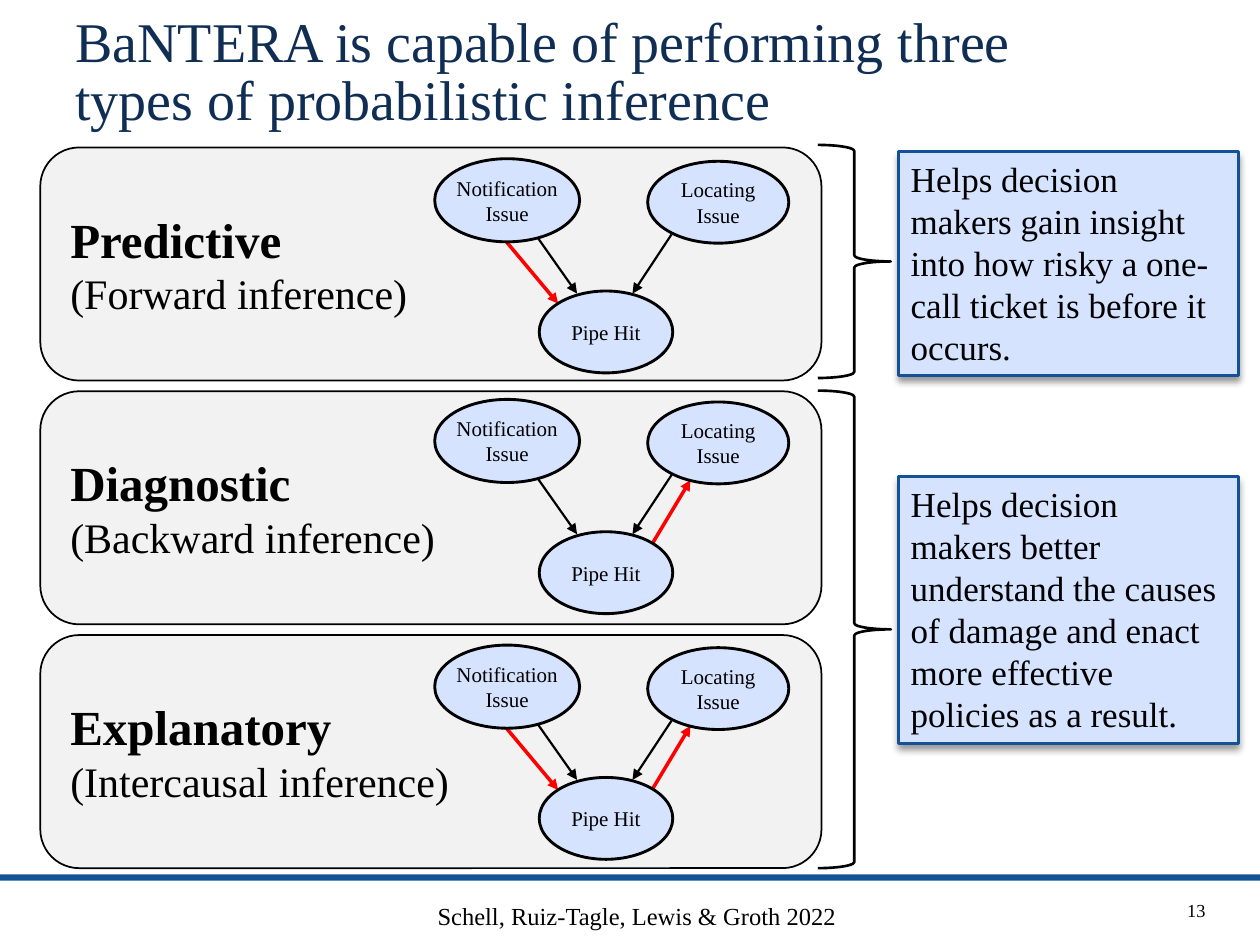
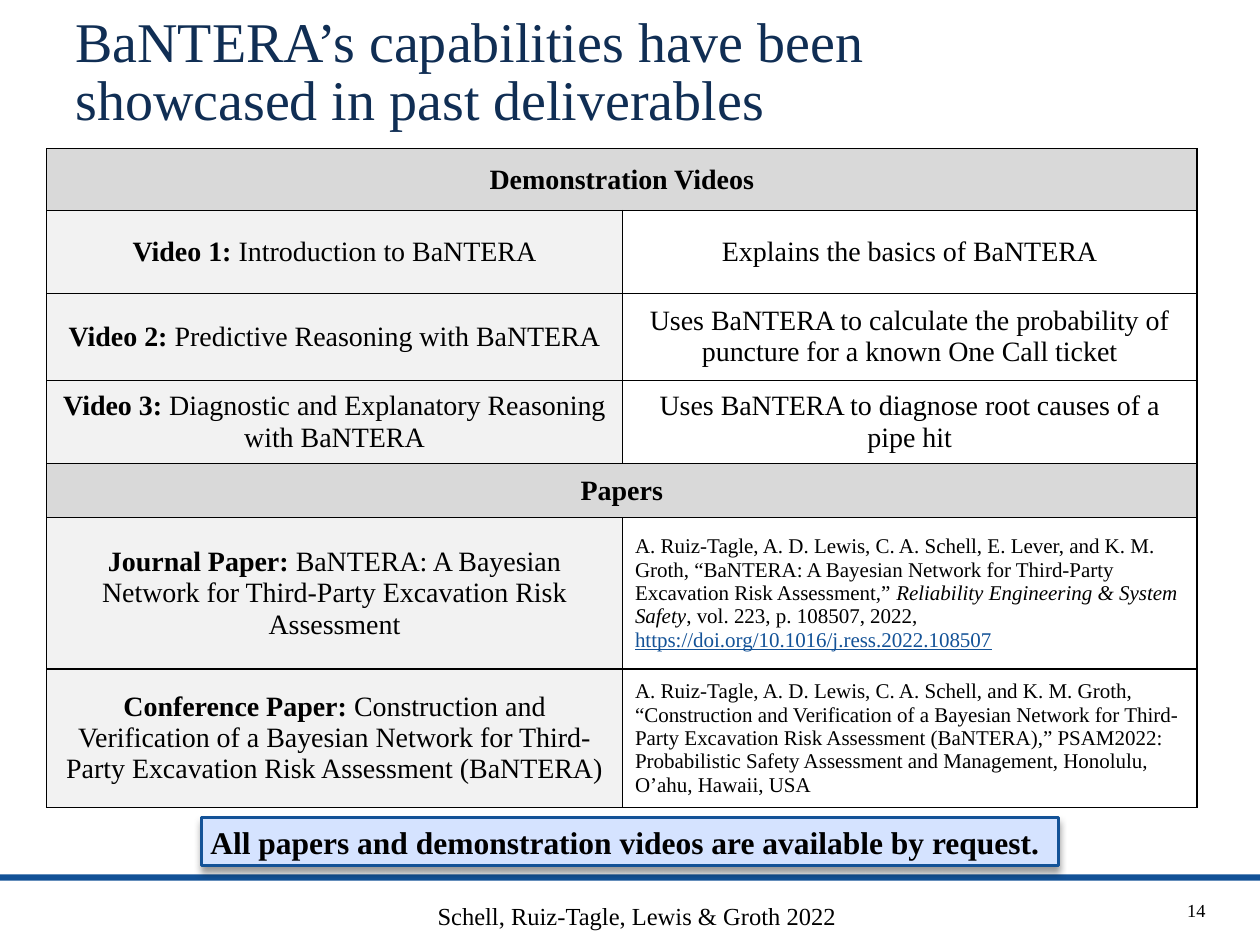
from lxml.etree import SubElement
from pptx import Presentation
from pptx.dml.color import RGBColor
from pptx.enum.shapes import MSO_CONNECTOR, MSO_SHAPE as SHAPE
from pptx.enum.text import MSO_ANCHOR as ANCHOR, MSO_AUTO_SIZE as AUTO, PP_ALIGN as ALIGN
from pptx.oxml import parse_xml
from pptx.oxml.ns import nsdecls, qn
from pptx.util import Inches, Pt

FONT = "Times New Roman"
BLACK = RGBColor(0x00, 0x00, 0x00)
RED = RGBColor(0xFF, 0x00, 0x00)
NAVY = RGBColor(0x10, 0x2E, 0x54)
BLUE = RGBColor(0x13, 0x52, 0x97)
PALE_BLUE = RGBColor(0xD5, 0xE3, 0xFF)
PALE_GREY = RGBColor(0xF2, 0xF2, 0xF2)
GREY = RGBColor(0xD9, 0xD9, 0xD9)

CITATION = "Schell, Ruiz-Tagle, Lewis & Groth 2022"
INFERENCE_TITLE = "BaNTERA is capable of performing three types of probabilistic inference"
DELIVERABLES_TITLE = "BaNTERA’s capabilities have been showcased in past deliverables"
AVAILABILITY = "All papers and demonstration videos are available by request."

INFERENCES = [
    ("Predictive", "(Forward inference)", 1.26, ["forward"]),
    ("Diagnostic", "(Backward inference)", 3.17, ["backward"]),
    ("Explanatory", "(Intercausal inference)", 5.12, ["forward", "backward"]),
]
NODES = [
    ("Notification Issue", 3.45, 0, 1.15, 0.66),
    ("Locating Issue", 5.14, 0.02, 1.12, 0.65),
    ("Pipe Hit", 4.28, 1.05, 1.06, 0.65),
]
CAUSAL_LINKS = [((4.27, 0.63), (4.58, 1.07)), ((5.33, 0.6), (5.02, 1.07))]
REASONING_LINKS = {
    "forward": ((4.02, 0.66), (4.43, 1.15)),
    "backward": ((5.18, 1.14), (5.48, 0.64)),
}
BENEFITS = [
    ("Helps decision makers gain insight into how risky a one-call ticket is before it occurs.",
     (7.13, 1.2, 2.7, 1.78), (6.49, 1.15, 0.58, 1.85)),
    ("Helps decision makers better understand the causes of damage and enact more effective "
     "policies as a result.",
     (7.13, 3.78, 2.7, 2.12), (6.49, 3.1, 0.58, 3.79)),
]

VIDEOS = [
    ("Video 1: ", "Introduction to BaNTERA", [("Explains the basics of BaNTERA", {})]),
    ("Video 2: ", "Predictive Reasoning with BaNTERA",
     [("Uses BaNTERA to calculate the probability of puncture for a known One Call ticket", {})]),
    ("Video 3: ", "Diagnostic and Explanatory Reasoning with BaNTERA",
     [("Uses BaNTERA to diagnose root causes of a pipe hit", {})]),
]
PAPERS = [
    ("Journal Paper: ",
     "BaNTERA: A Bayesian Network for Third-Party Excavation Risk Assessment",
     [("A. Ruiz-Tagle, A. D. Lewis, C. A. Schell, E. Lever, and K. M. Groth, “BaNTERA: A Bayesian "
       "Network for Third-Party Excavation Risk Assessment,” ", {}),
      ("Reliability Engineering & System Safety", {"italic": True}),
      (", vol. 223, p. 108507, 2022, ", {}),
      ("https://doi.org/10.1016/j.ress.2022.108507", {"color": BLUE, "underline": True})]),
    ("Conference Paper: ",
     "Construction and Verification of a Bayesian Network for Third-Party Excavation Risk "
     "Assessment (BaNTERA)",
     [("A. Ruiz-Tagle, A. D. Lewis, C. A. Schell, and K. M. Groth, “Construction and Verification "
       "of a Bayesian Network for Third-Party Excavation Risk Assessment (BaNTERA),” PSAM2022: "
       "Probabilistic Safety Assessment and Management, Honolulu, O’ahu, Hawaii, USA", {})]),
]
DELIVERABLES = [
    ("Demonstration Videos", VIDEOS, 1.18, [0.49, 0.66, 0.69, 0.66], 16, ALIGN.CENTER),
    ("Papers", PAPERS, 3.68, [0.43, 1.2, 0.96], 12, ALIGN.LEFT),
]
COLUMNS = [4.57, 4.56]


def add_run(paragraph, text, size, color=BLACK, bold=False, italic=False, underline=False):
    run = paragraph.add_run()
    run.text = text
    font = run.font
    font.name, font.size, font.bold, font.italic = FONT, Pt(size), bold, italic
    font.underline = underline
    font.color.rgb = color


def write(frame, lines, align=ALIGN.LEFT, anchor=ANCHOR.TOP, insets=(0.1, 0.05)):
    frame.word_wrap = True
    frame.vertical_anchor = anchor
    frame.margin_left = frame.margin_right = Inches(insets[0])
    frame.margin_top = frame.margin_bottom = Inches(insets[1])
    for number, (text, size, style) in enumerate(lines):
        paragraph = frame.add_paragraph() if number else frame.paragraphs[0]
        paragraph.alignment = align
        add_run(paragraph, text, size, **style)


def add_text(slide, box, lines, **layout):
    frame = slide.shapes.add_textbox(*map(Inches, box)).text_frame
    write(frame, lines, **layout)
    return frame


def add_shape(slide, kind, box, fill=None, line=None, width=1):
    shape = slide.shapes.add_shape(kind, *map(Inches, box))
    shape.shadow.inherit = False
    if fill is None:
        shape.fill.background()
    else:
        shape.fill.solid()
        shape.fill.fore_color.rgb = fill
    if line is None:
        shape.line.fill.background()
    else:
        shape.line.color.rgb = line
        shape.line.width = Pt(width)
    return shape


def add_callout(slide, box, text, size, bold=False, insets=(0.1, 0.05)):
    callout = add_shape(slide, SHAPE.RECTANGLE, box, PALE_BLUE, BLUE, 1.5)
    effects = callout._element.spPr.find(qn("a:effectLst"))
    effects.append(parse_xml(
        f'<a:outerShdw {nsdecls("a")} blurRad="{Pt(4)}" dist="{Pt(3)}" dir="5400000" '
        'rotWithShape="0"><a:srgbClr val="000000"><a:alpha val="40000"/></a:srgbClr>'
        '</a:outerShdw>'))
    write(callout.text_frame, [(text, size, {"bold": bold})], insets=insets)
    callout.text_frame.auto_size = AUTO.SHAPE_TO_FIT_TEXT


def add_arrow(slide, link, top, color, width):
    (x1, y1), (x2, y2) = link
    arrow = slide.shapes.add_connector(
        MSO_CONNECTOR.STRAIGHT, Inches(x1), Inches(top + y1), Inches(x2), Inches(top + y2))
    arrow.line.color.rgb = color
    arrow.line.width = Pt(width)
    properties = arrow._element.spPr
    SubElement(properties.find(qn("a:ln")), qn("a:tailEnd"), type="triangle")
    SubElement(properties, qn("a:effectLst"))


def add_network(slide, top, reasoning):
    for direction in reasoning:
        add_arrow(slide, REASONING_LINKS[direction], top, RED, 2)
    for link in CAUSAL_LINKS:
        add_arrow(slide, link, top, BLACK, 1.25)
    for label, left, drop, width, height in NODES:
        node = add_shape(slide, SHAPE.OVAL, (left, top + drop, width, height),
                         PALE_BLUE, BLACK, 1.63)
        write(node.text_frame, [(label, 12, {})], ALIGN.CENTER, ANCHOR.MIDDLE, (0, 0.05))


def fill_cell(cell, runs, size, align, fill=None):
    cell.vertical_anchor = ANCHOR.MIDDLE
    paragraph = cell.text_frame.paragraphs[0]
    paragraph.alignment = align
    for text, style in runs:
        add_run(paragraph, text, size, **style)
    if fill is None:
        cell.fill.background()
    else:
        cell.fill.solid()
        cell.fill.fore_color.rgb = fill


def add_borders(cell):
    properties = cell._tc.get_or_add_tcPr()
    for position, side in enumerate("LRTB"):
        properties.insert(position, parse_xml(
            f'<a:ln{side} {nsdecls("a")} w="{Pt(0.75)}"><a:solidFill>'
            f'<a:srgbClr val="{BLACK}"/></a:solidFill></a:ln{side}>'))


def add_deliverables(slide, heading, entries, top, heights, size, align):
    table = slide.shapes.add_table(
        len(heights), len(COLUMNS), Inches(0.37), Inches(top),
        Inches(sum(COLUMNS)), Inches(sum(heights))).table
    table.first_row = table.horz_banding = False
    for column, width in zip(table.columns, COLUMNS):
        column.width = Inches(width)
    for row, height in zip(table.rows, heights):
        row.height = Inches(height)
    table.cell(0, 0).merge(table.cell(0, 1))
    fill_cell(table.cell(0, 0), [(heading, {"bold": True})], 16, ALIGN.CENTER, GREY)
    for row, (kind, name, details) in enumerate(entries, 1):
        fill_cell(table.cell(row, 0), [(kind, {"bold": True}), (name, {})],
                  16, ALIGN.CENTER, PALE_GREY)
        fill_cell(table.cell(row, 1), details, size, align)
    for cell in table.iter_cells():
        add_borders(cell)


def start_slide(deck, title, number):
    slide = deck.slides.add_slide(deck.slide_layouts[6])
    add_shape(slide, SHAPE.RECTANGLE, (0, 6.94, 10, 0.05), BLUE)
    heading = add_text(slide, (0.5, 0.05, 8.43, 1.08), [(title, 32, {"color": NAVY})],
                       anchor=ANCHOR.MIDDLE)
    heading.paragraphs[0].line_spacing = 0.85
    add_text(slide, (9.16, 7.09, 0.67, 0.33), [(str(number), 10.5, {})], align=ALIGN.CENTER)
    add_text(slide, (2.61, 7.1, 4.89, 0.31), [(CITATION, 14, {})], align=ALIGN.CENTER)
    return slide


def build_inference(deck):
    slide = start_slide(deck, INFERENCE_TITLE, 13)
    for index, (name, direction, network_top, reasoning) in enumerate(INFERENCES):
        step = index * 1.935
        add_shape(slide, SHAPE.ROUNDED_RECTANGLE, (0.32, 1.17 + step, 6.2, 1.85),
                  PALE_GREY, BLACK)
        add_text(slide, (0.46, 1.61 + step, 3.53, 0.98),
                 [(name, 28, {"bold": True}), (direction, 24, {})])
        add_network(slide, network_top, reasoning)
    for benefit, box, brace in BENEFITS:
        add_shape(slide, SHAPE.RIGHT_BRACE, brace, line=BLACK, width=1.5)
        add_callout(slide, box, benefit, 20)


def build_deliverables(deck):
    slide = start_slide(deck, DELIVERABLES_TITLE, 14)
    for group in DELIVERABLES:
        add_deliverables(slide, *group)
    add_callout(slide, (1.6, 6.49, 6.8, 0.38), AVAILABILITY, 18, True, (0.07, 0.04))


def main():
    deck = Presentation()
    deck.slide_width, deck.slide_height = Inches(10), Inches(7.5)
    build_inference(deck)
    build_deliverables(deck)
    deck.save("out.pptx")


if __name__ == "__main__":
    main()
